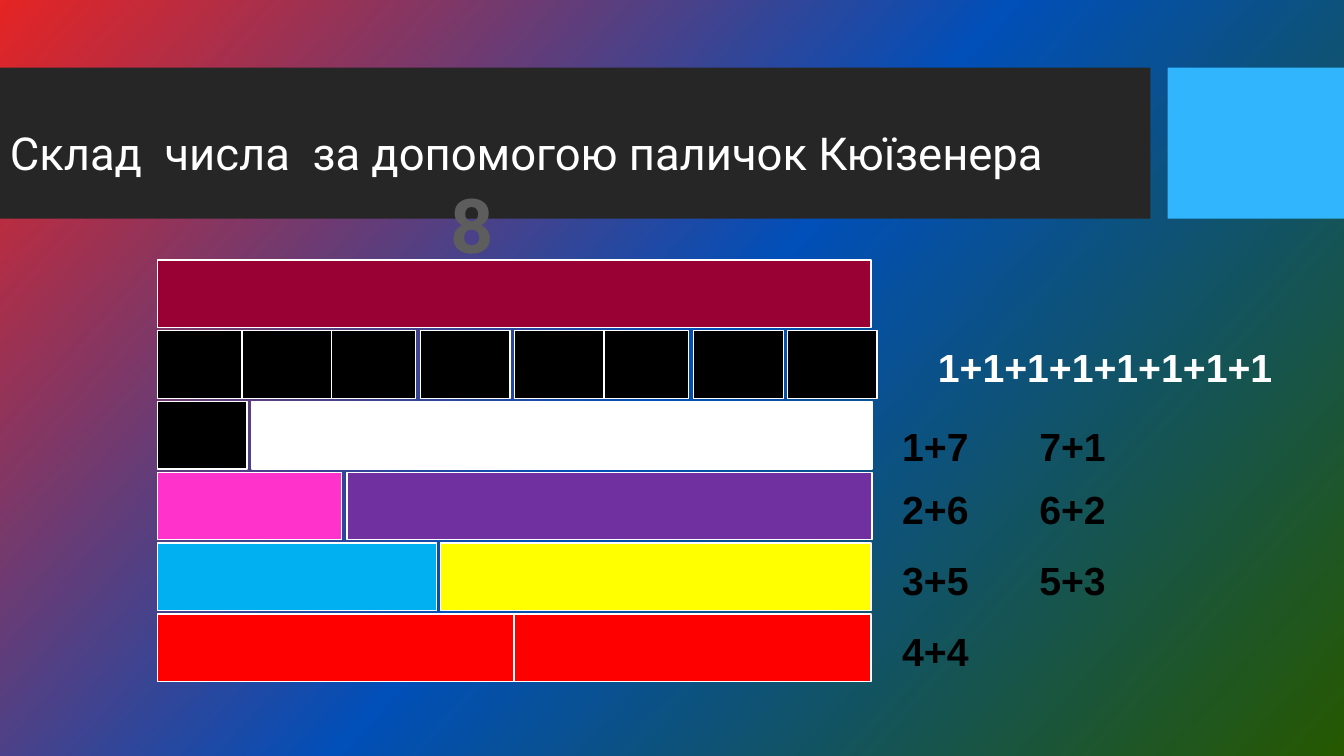
from copy import deepcopy
from pptx import Presentation
from pptx.dml.color import RGBColor as RGB
from pptx.enum.shapes import MSO_SHAPE as SHAPE
from pptx.enum.text import MSO_ANCHOR as ANCHOR, PP_ALIGN as ALIGN
from pptx.oxml.ns import qn
from pptx.util import Inches, Pt

COLORS = {
    "start": "E52424", "mid": "014FB8", "end": "265800",
    "band": "262626", "accent": "31B6FD", "digit": "5D5D5D",
    "white": "FFFFFF", "black": "000000", "maroon": "990033",
    "pink": "FF33CC", "purple": "7030A0", "blue": "00B0F0",
    "yellow": "FFFF00", "red": "FF0000",
}


def add_bar(left, top, width, height, color, edge=None):
    bar = slide.shapes.add_shape(
        SHAPE.RECTANGLE, Inches(left), Inches(top), Inches(width), Inches(height))
    bar.shadow.inherit = False
    bar.fill.solid()
    bar.fill.fore_color.rgb = RGB.from_string(COLORS[color])
    if edge:
        bar.line.color.rgb = RGB.from_string(COLORS[edge])
        bar.line.width = Pt(1)
    else:
        bar.line.fill.background()


def add_text(left, top, width, height, text, size, color, font="Arial", bold=True, align=ALIGN.LEFT):
    box = slide.shapes.add_textbox(Inches(left), Inches(top), Inches(width), Inches(height))
    frame = box.text_frame
    frame.word_wrap = False
    frame.text = text
    para = frame.paragraphs[0]
    para.alignment = align
    run = para.runs[0]
    run.font.name = font
    run.font.size = Pt(size)
    run.font.bold = bold
    run.font.color.rgb = RGB.from_string(COLORS[color])
    return frame


prs = Presentation()
prs.slide_width = Inches(13.33)
prs.slide_height = Inches(7.5)
slide = prs.slides.add_slide(prs.slide_layouts[6])

fill = slide.background.fill
fill.gradient()
fill.gradient_angle = 318
stops = slide.element.find(".//" + qn("a:gsLst"))
stops.insert(1, deepcopy(stops[0]))
for stop, name, place in zip(fill.gradient_stops, ("start", "mid", "end"), (0, 0.5, 1)):
    stop.color.rgb = RGB.from_string(COLORS[name])
    stop.position = place

add_bar(0, 0.67, 11.41, 1.5, "band")
add_bar(11.58, 0.67, 1.75, 1.5, "accent")
title = add_text(0, 0.9, 11.37, 0.96, "Склад  числа  за допомогою паличок Кюїзенера",
                 32.4, "white", "Roboto", False)
title.word_wrap = True
title.vertical_anchor = ANCHOR.MIDDLE
title.paragraphs[0].line_spacing = 1.5

units = (1.56, 7.81, 6.88, 5.94, 5.1, 4.17, 3.23, 2.4)
rows = [
    [(1.56, 7.08, "maroon")],
    [(left, 0.89, "black") for left in units],
    [(1.56, 0.89, "black"), (2.5, 6.15, "white")],
    [(1.56, 1.83, "pink"), (3.44, 5.21, "purple")],
    [(1.56, 2.77, "blue"), (4.37, 4.27, "yellow")],
    [(5.1, 3.54, "red"), (1.56, 3.54, "red")],
]
for i, row in enumerate(rows):
    for left, width, color in row:
        add_bar(left, 2.58 + i * 3.51 / 5, width, 0.67, color, "white")

add_text(4.36, 1.72, 0.65, 1.01, "8", 54, "digit", "Roboto", align=ALIGN.CENTER)
add_text(9.18, 3.36, 3.56, 0.57, "1+1+1+1+1+1+1+1", 28, "white", align=ALIGN.CENTER)

sums = [
    (4.14, ("1+7", "7+1")),
    (4.77, ("2+6", "6+2")),
    (5.47, ("3+5", "5+3")),
    (6.17, ("4+4",)),
]
for top, pair in sums:
    for left, text in zip((8.85, 10.21), pair):
        add_text(left, top, 0.87, 0.57, text, 28, "black")

prs.save("out.pptx")
